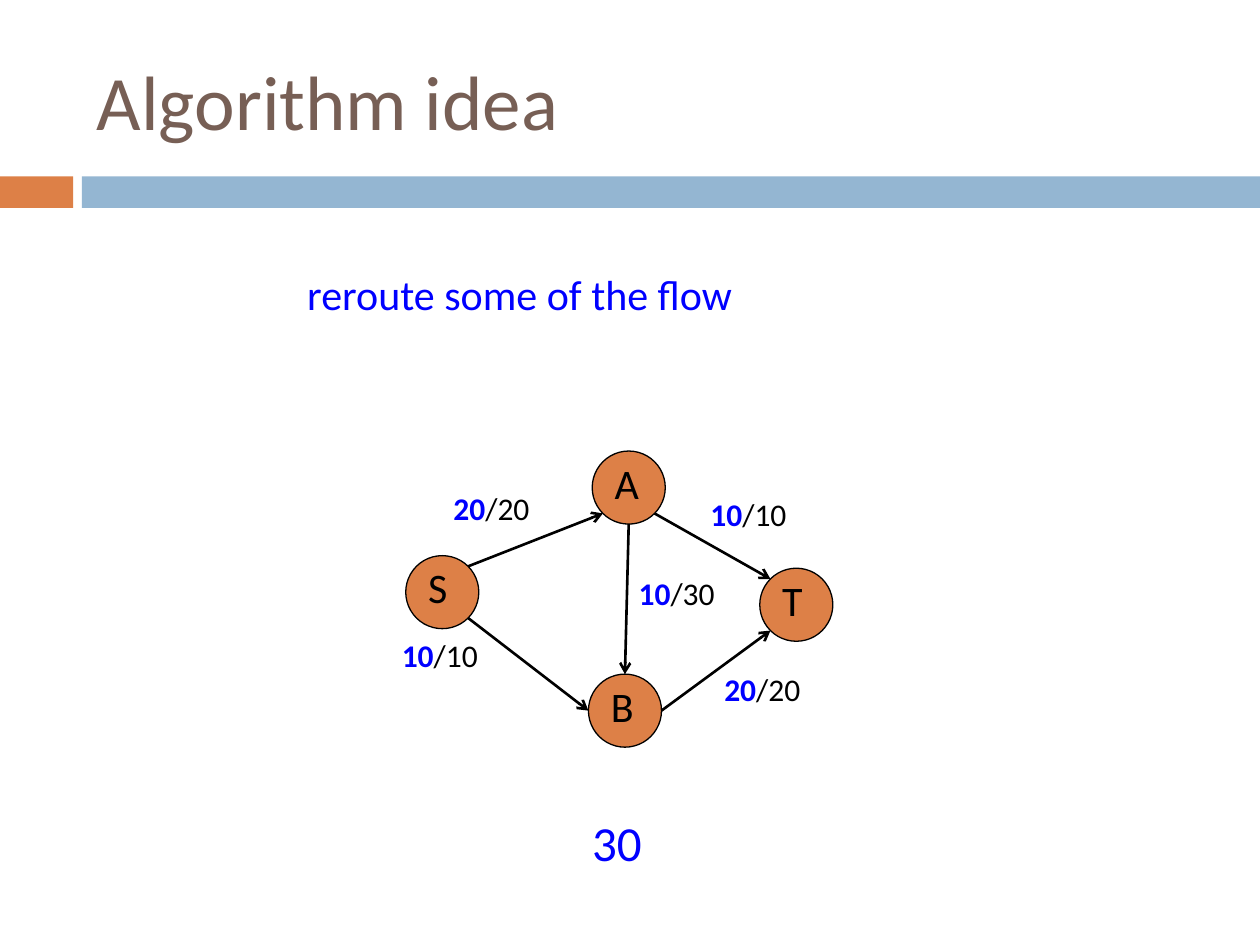
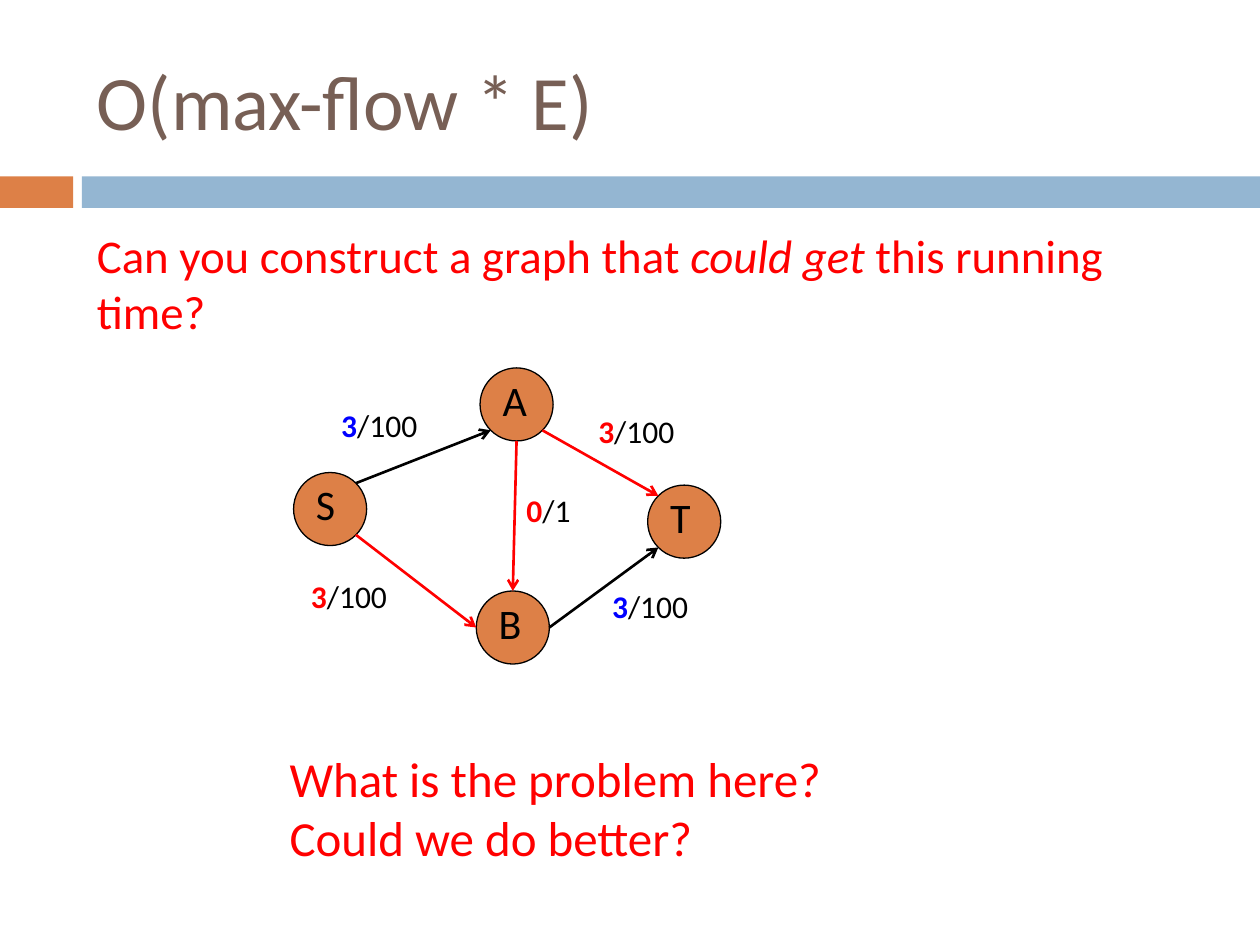
"""Build two slides on maximum flow, each with a small network graph."""
from lxml import etree
from pptx import Presentation
from pptx import util as u
from pptx.dml import color
from pptx.enum import shapes, text
from pptx.oxml import ns

ORANGE, BAND, BROWN = "DD8047", "94B6D2", "775F55"
BLACK, BLUE, RED = "000000", "0000FF", "FF0000"
SIZE = 0.58
DIAG = 0.5 ** 0.5
NODES = {"S": (0, 0.83), "A": (1.48, 0), "B": (1.45, 1.77), "T": (2.81, 0.93)}
SIDES = {
    "SA": ((DIAG, -DIAG), (-DIAG, DIAG)),
    "SB": ((DIAG, DIAG), (-1, 0)),
    "BT": ((1, 0), (-DIAG, DIAG)),
    "AB": ((0, 1), (0, -1)),
    "AT": ((DIAG, DIAG), (-DIAG, -DIAG)),
}
LABELS = {
    "SA": (0.28, 0.25, 1.01),
    "SB": (-0.13, 1.42, 1.35),
    "BT": (2.43, 1.69, 1.23),
    "AB": (1.75, 0.93, 0.93),
    "AT": (2.32, 0.3, 1.07),
}


def rgb(code):
    """Turn a hex string into a colour."""
    return color.RGBColor.from_string(code)


class Deck:
    """Hold the shared style and the current slide."""

    font = "Calibri"

    def __init__(self):
        """Start an empty deck of 10 by 7.5 inches."""
        self.file = Presentation()
        self.file.slide_width = u.Inches(10)
        self.file.slide_height = u.Inches(7.5)

    def page(self, title):
        """Add a slide with its bands and title."""
        self.slide = self.file.slides.add_slide(self.file.slide_layouts[6])
        self.shape("RECTANGLE", (0, 1.4, SIZE, 0.25), ORANGE)
        self.shape("RECTANGLE", (0.65, 1.4, 9.35, 0.25), BAND)
        self.text((0.67, 0.25, 8.92, 1.08), [(title, BROWN)], 44, "MIDDLE")

    def shape(self, kind, box, fill, line=None, home=None):
        """Draw a filled preset shape, with an outline if asked."""
        home = home or self.slide.shapes
        item = home.add_shape(shapes.MSO_SHAPE[kind], *map(u.Inches, box))
        item.shadow.inherit = False
        item.fill.solid()
        item.fill.fore_color.rgb = rgb(fill)
        if line:
            item.line.color.rgb = rgb(line)
            item.line.width = u.Pt(0.75)
        else:
            item.line.fill.background()

    def text(self, box, runs, size, anchor="TOP", home=None):
        """Write one paragraph of runs: words, colour and extra formats."""
        home = home or self.slide.shapes
        frame = home.add_textbox(*map(u.Inches, box)).text_frame
        frame.word_wrap = True
        frame.vertical_anchor = text.MSO_ANCHOR[anchor]
        for words, tint, *extra in runs:
            run = frame.paragraphs[0].add_run()
            run.text = words
            run.font.color.rgb = rgb(tint)
            form = {"name": self.font, "size": u.Pt(size)}
            form.update(*extra)
            for key, value in form.items():
                setattr(run.font, key, value)

    def arrow(self, start, end, tint):
        """Draw a straight arrow."""
        line = self.slide.shapes.add_connector(
            shapes.MSO_CONNECTOR.STRAIGHT, *map(u.Inches, (*start, *end)))
        line.line.color.rgb = rgb(tint)
        line.line.width = u.Pt(1.5)
        props = line.line._get_or_add_ln()
        etree.SubElement(props, ns.qn("a:tailEnd"), type="arrow")
        etree.SubElement(props.getparent(), ns.qn("a:effectLst"))

    def node(self, name, left, top):
        """Draw a lettered circle as a group."""
        home = self.slide.shapes.add_group_shape().shapes
        self.shape("OVAL", (left, top, SIZE, SIZE), ORANGE, BLACK, home)
        self.text((left + 0.08, top, 0.5, 0.5), [(name, BLACK)], 24, home=home)

    def graph(self, left, top, flows, moved=None):
        """Draw the network; flows give flow, limit, arrow and flow colours."""
        half = SIZE / 2
        mids = {}
        for name, (x, y) in NODES.items():
            self.node(name, left + x, top + y)
            mids[name] = left + x + half, top + y + half
        for edge, (flow, limit, tint, mark) in flows.items():
            ends = [[mid + half * way for mid, way in zip(mids[name], side)]
                    for name, side in zip(edge, SIDES[edge])]
            self.arrow(*ends, tint)
            x, y, wide = {**LABELS, **(moved or {})}[edge]
            self.text((left + x, top + y, wide, 0.4),
                      [(flow, mark, {"bold": True}), ("/" + limit, BLACK)], 18)


def main():
    """Build and save both slides."""
    deck = Deck()
    deck.page("Algorithm idea")
    deck.graph(3.22, 3.58, {
        "SA": ("20", "20", BLACK, BLUE),
        "SB": ("10", "10", BLACK, BLUE),
        "BT": ("20", "20", BLACK, BLUE),
        "AB": ("10", "30", BLACK, BLUE),
        "AT": ("10", "10", BLACK, BLUE),
    })
    deck.text((2.34, 2.08, 5.54, 0.5), [("reroute some of the flow", BLUE)], 24)
    deck.text((4.6, 6.4, 0.72, 0.57), [("30", BLUE)], 28)

    deck.page("O(max-flow * E)")
    deck.text((0.67, 1.75, 8.92, 0.7), [
        ("Can you construct a graph that ", RED),
        ("could get", RED, {"italic": True}),
        (" this running time?", RED),
    ], 26.8)
    deck.graph(2.33, 2.92, {
        "SA": ("3", "100", BLACK, BLUE),
        "SB": ("3", "100", RED, RED),
        "BT": ("3", "100", BLACK, BLUE),
        "AB": ("0", "1", RED, RED),
        "AT": ("3", "100", RED, RED),
    }, {"SB": (0.04, 1.61, 1.16)})
    deck.text((2.2, 5.89, 5.04, 1.04),
              [("What is the problem here? Could we do better?", RED)], 28)
    deck.file.save("out.pptx")


if __name__ == "__main__":
    main()
